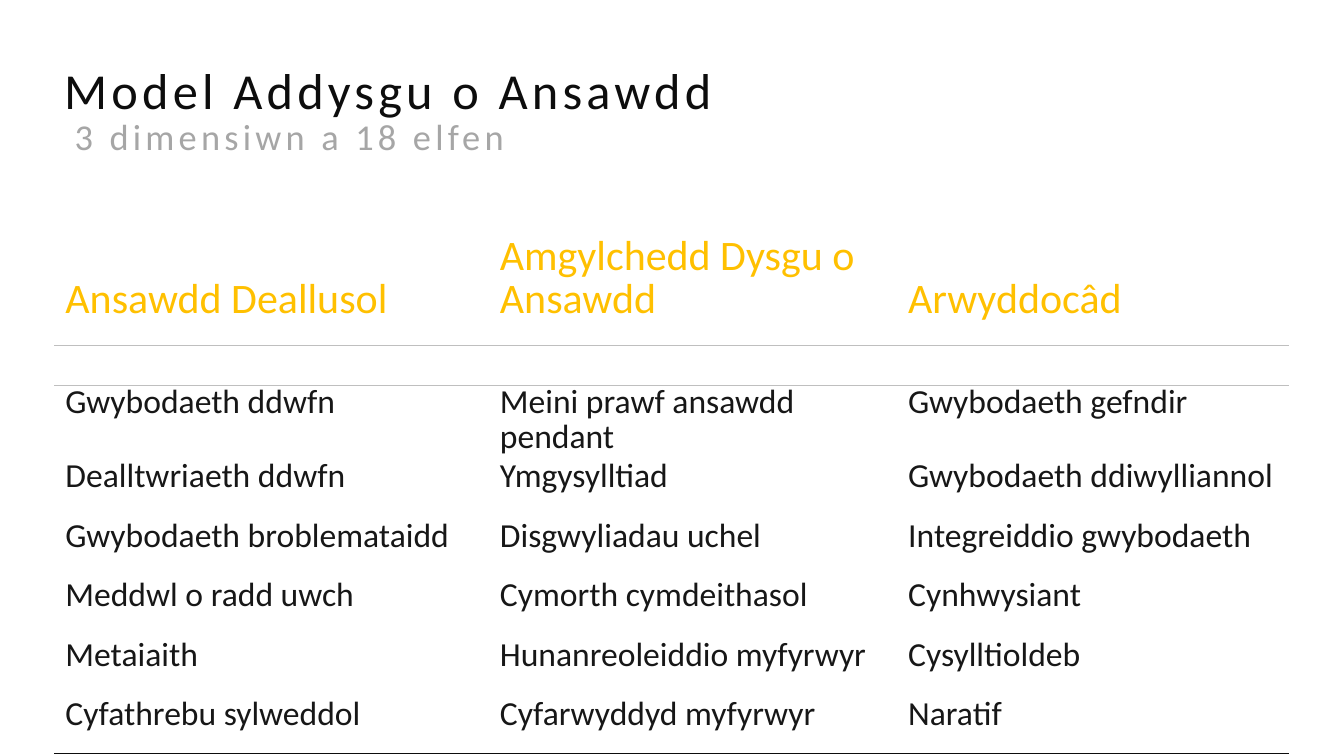
from lxml import etree
from pptx import Presentation
from pptx.dml.color import RGBColor
from pptx.enum.text import MSO_ANCHOR
from pptx.oxml.ns import qn
from pptx.util import Cm, Pt

TOP, BOTTOM = MSO_ANCHOR.TOP, MSO_ANCHOR.BOTTOM

INK = RGBColor(0x0D, 0x0D, 0x0D)
BODY = RGBColor(0x17, 0x17, 0x17)
GREY = RGBColor(0xA6, 0xA6, 0xA6)
RULE = RGBColor(0xBF, 0xBF, 0xBF)
GOLD = RGBColor(0xFF, 0xC0, 0x00)

FONT = "Calibri"
NO_STYLE = "{2D5ABB26-0587-4C30-8999-92F81FD0307C}"
COL_WIDTHS = [10.95, 10.29, 9.88]
ROW_HEIGHTS = [2.69, 0.56, 1.02, 1.88] + [1.5] * 4 + [1.4]
FIRST_ELEMENT_ROW = 3

DIMENSIONS = ["Ansawdd Deallusol", "Amgylchedd Dysgu o Ansawdd", "Arwyddocâd"]
ELEMENTS = [
    ["Gwybodaeth ddwfn", "Meini prawf ansawdd pendant", "Gwybodaeth gefndir"],
    ["Dealltwriaeth ddwfn", "Ymgysylltiad", "Gwybodaeth ddiwylliannol"],
    ["Gwybodaeth broblemataidd", "Disgwyliadau uchel", "Integreiddio gwybodaeth"],
    ["Meddwl o radd uwch", "Cymorth cymdeithasol", "Cynhwysiant"],
    ["Metaiaith", "Hunanreoleiddio myfyrwyr", "Cysylltioldeb"],
    ["Cyfathrebu sylweddol", "Cyfarwyddyd myfyrwyr", "Naratif"],
]


def add_run(p, text, size, color):
    p.line_spacing = 0.85
    r = p.add_run()
    r.text = text
    r.font.name = FONT
    r.font.size = Pt(size)
    r.font.color.rgb = color
    return r


def add_heading(s, text, left, top, width, height, size, color):
    sp = s.shapes.add_textbox(Cm(left), Cm(top), Cm(width), Cm(height))
    tf = sp.text_frame
    tf.word_wrap = True
    r = add_run(tf.paragraphs[0], text, size, color)
    r.font._element.set("spc", "300")


def fill_cell(cell, text, size, color, anchor, after):
    cell.vertical_anchor = anchor
    p = cell.text_frame.paragraphs[0]
    p.space_before, p.space_after = Pt(2), Pt(after)
    add_run(p, text, size, color)


def set_border(cell, tag, color, width):
    ln = etree.Element(qn(tag), w=str(Pt(width)))
    fill = etree.SubElement(ln, qn("a:solidFill"))
    etree.SubElement(fill, qn("a:srgbClr"), val=str(color))
    cell._tc.get_or_add_tcPr().insert(0, ln)


def add_grid(s, left, top):
    frame = s.shapes.add_table(len(ROW_HEIGHTS), len(COL_WIDTHS), Cm(left), Cm(top),
                               Cm(sum(COL_WIDTHS)), Cm(sum(ROW_HEIGHTS)))
    table = frame.table
    table.first_row = table.horz_banding = False
    table._tbl.tblPr.find(qn("a:tableStyleId")).text = NO_STYLE
    for col, width in zip(table.columns, COL_WIDTHS):
        col.width = Cm(width)
    for row, height in zip(table.rows, ROW_HEIGHTS):
        row.height = Cm(height)
    for cell in table.iter_cells():
        cell.fill.background()
        cell.margin_left = cell.margin_right = Cm(0.28)
        cell.margin_top = cell.margin_bottom = 0
    return table


def add_model_table(s):
    table = add_grid(s, 1.37, 5.44)
    for c, name in enumerate(DIMENSIONS):
        fill_cell(table.cell(0, c), name, 30, GOLD, BOTTOM, 12)
        # Spacer rows on both sides of the rule
        for row in (1, 2):
            p = table.cell(row, c).text_frame.paragraphs[0]
            etree.SubElement(p._p, qn("a:endParaRPr"), sz="800")
        set_border(table.cell(1, c), "a:lnB", RULE, 0.5)
        set_border(table.cell(2, c), "a:lnT", RULE, 0.5)
        set_border(table.cell(len(ROW_HEIGHTS) - 1, c), "a:lnB", INK, 0.25)
    for row, names in enumerate(ELEMENTS, FIRST_ELEMENT_ROW):
        for c, name in enumerate(names):
            fill_cell(table.cell(row, c), name, 24, BODY, TOP, 2)


def main():
    prs = Presentation()
    prs.slide_width, prs.slide_height = Cm(33.87), Cm(19.05)
    s = prs.slides.add_slide(prs.slide_layouts[6])

    # Dimensions and their elements
    add_model_table(s)

    # Title and subtitle
    add_heading(s, "Model Addysgu o Ansawdd", 1.37, 1.6, 30.2, 1.57, 36, INK)
    add_heading(s, "3 dimensiwn a 18 elfen", 1.63, 2.92, 16.76, 1.22, 26, GREY)

    prs.save("out.pptx")


if __name__ == "__main__":
    main()
